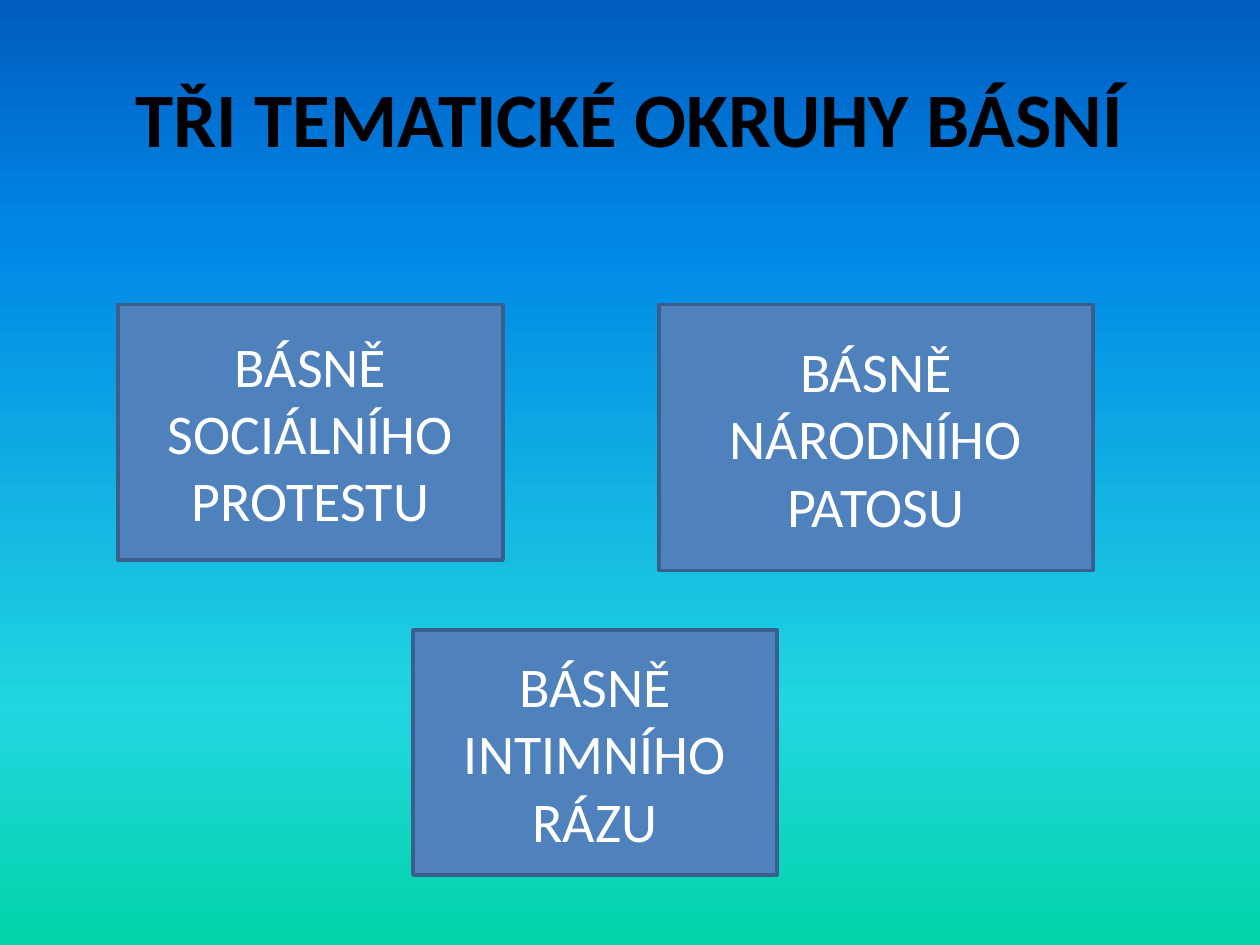
import copy

import pptx
import pptx.dml.color
import pptx.enum.shapes
import pptx.enum.text
import pptx.oxml.ns
import pptx.util

Pt = pptx.util.Pt
BACKGROUND_STOPS = [(0, "03D4A8"), (0.25, "21D6E0"), (0.75, "0087E6"), (1, "005CBF")]
THEMES = [
    ("BÁSNĚ SOCIÁLNÍHO PROTESTU", 67.5, 174, 220, 146),
    ("BÁSNĚ NÁRODNÍHO PATOSU", 376.5, 174, 248, 152),
    ("BÁSNĚ INTIMNÍHO RÁZU", 236, 360, 208, 140),
]


def color(hex_code):
    """Return the RGB colour for a hex string."""
    return pptx.dml.color.RGBColor.from_string(hex_code)


def set_background(slide, stops):
    """Fill the slide with a gradient that runs from bottom to top."""
    fill = slide.background.fill
    fill.gradient()
    fill.gradient_angle = 90
    stop_list = slide.element.find(".//" + pptx.oxml.ns.qn("a:gsLst"))
    while len(stop_list) < len(stops):
        stop_list.append(copy.deepcopy(stop_list[0]))
    for stop, (position, hex_code) in zip(fill.gradient_stops, stops):
        stop.position = position
        stop.color.rgb = color(hex_code)


def write_text(shape, text, size, hex_code, bold=False):
    """Write centred, wrapping text into a shape."""
    frame = shape.text_frame
    frame.text = text
    frame.word_wrap = True
    frame.vertical_anchor = pptx.enum.text.MSO_ANCHOR.MIDDLE
    paragraph = frame.paragraphs[0]
    paragraph.alignment = pptx.enum.text.PP_ALIGN.CENTER
    font = paragraph.runs[0].font
    font.name = "Calibri"
    font.size = Pt(size)
    font.bold = bold
    font.color.rgb = color(hex_code)


def add_title(slide, text):
    """Add the slide title."""
    title = slide.shapes.add_textbox(Pt(36), Pt(21.6), Pt(648), Pt(90))
    write_text(title, text, 44, "000000", bold=True)


def add_theme_box(slide, text, left, top, width, height):
    """Add an outlined rectangle that names one theme."""
    box = slide.shapes.add_shape(
        pptx.enum.shapes.MSO_SHAPE.RECTANGLE, Pt(left), Pt(top), Pt(width), Pt(height)
    )
    box.shadow.inherit = False
    box.fill.solid()
    box.fill.fore_color.rgb = color("4F81BD")
    box.line.color.rgb = color("3A5F8C")
    box.line.width = Pt(2)
    write_text(box, text, 32, "FFFFFF")


def main():
    """Build and save the slide."""
    presentation = pptx.Presentation()
    presentation.slide_width = Pt(720)
    presentation.slide_height = Pt(540)
    slide = presentation.slides.add_slide(presentation.slide_layouts[6])
    set_background(slide, BACKGROUND_STOPS)
    add_title(slide, "TŘI TEMATICKÉ OKRUHY BÁSNÍ")
    for theme in THEMES:
        add_theme_box(slide, *theme)
    presentation.save("out.pptx")


if __name__ == "__main__":
    main()
